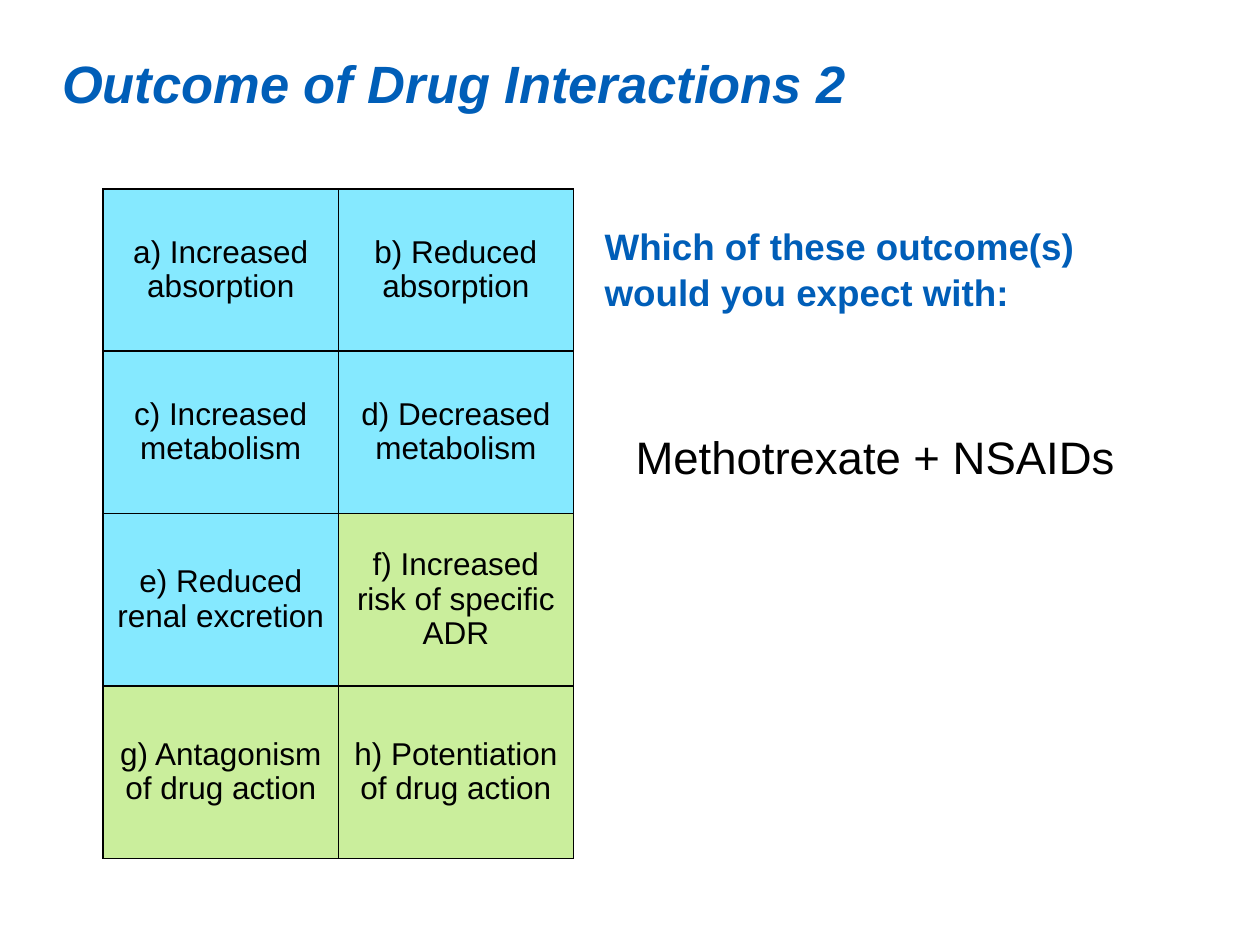
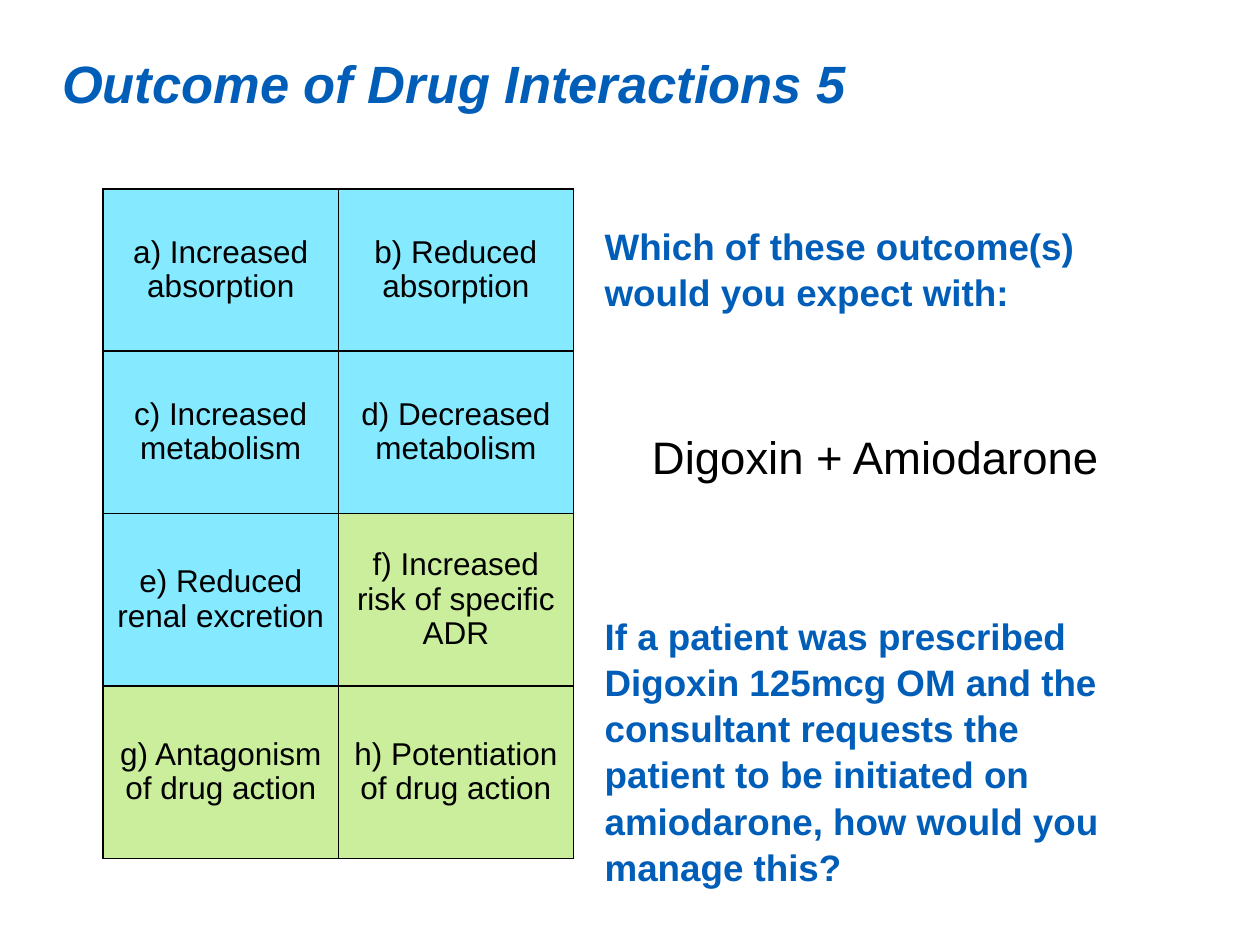
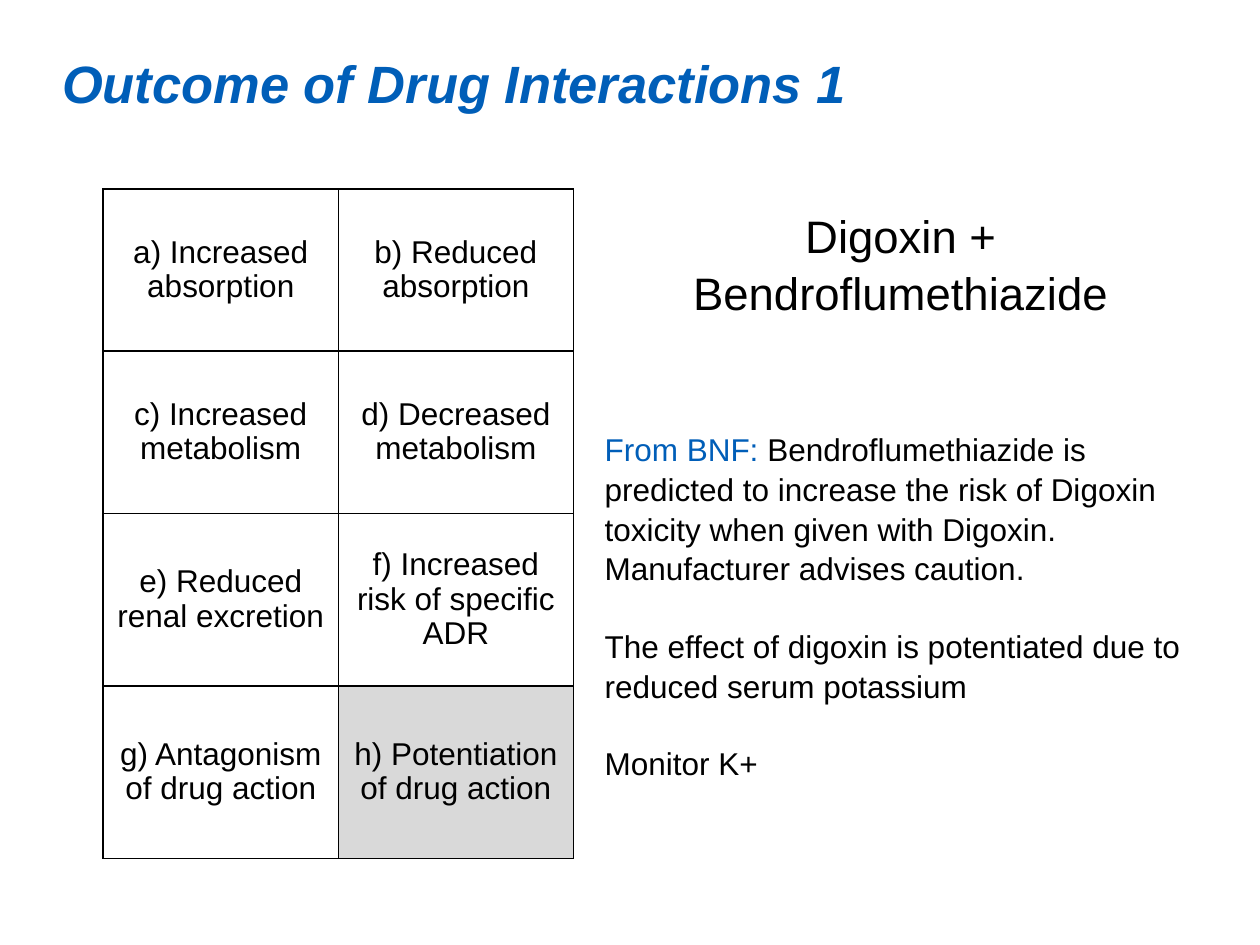
from dataclasses import dataclass
from typing import Optional

from lxml.etree import SubElement
from pptx import Presentation
from pptx.dml.color import RGBColor
from pptx.enum.text import MSO_ANCHOR, PP_ALIGN
from pptx.oxml.ns import qn
from pptx.slide import Slide
from pptx.table import _Cell
from pptx.text.text import Font, TextFrame
from pptx.util import Cm, Pt


@dataclass(frozen=True)
class Theme:
    font: str = "Arial"
    blue: str = "005EB8"
    black: str = "000000"
    white: str = "FFFFFF"
    cyan: str = "85E9FF"
    green: str = "CAEE9C"
    grey: str = "D9D9D9"
    title_size: int = 30
    drug_size: int = 26
    question_size: int = 21
    body_size: int = 18
    text_spacing: float = 1.05
    cell_spacing: float = 0.97


@dataclass(frozen=True)
class TextStyle:
    size: int
    color: str
    bold: bool = False
    italic: bool = False
    alignment: PP_ALIGN = PP_ALIGN.LEFT


@dataclass(frozen=True)
class Run:
    text: str
    color: str


@dataclass(frozen=True)
class TextBlock:
    paragraphs: tuple[tuple[Run, ...], ...]
    style: TextStyle
    left: float
    top: float
    width: float
    height: float
    gap: float = 0


@dataclass(frozen=True)
class OutcomeSlide:
    number: int
    fills: tuple[str, ...]
    blocks: tuple[TextBlock, ...]


THEME = Theme()
TITLE = TextStyle(THEME.title_size, THEME.blue, bold=True, italic=True)
QUESTION = TextStyle(THEME.question_size, THEME.blue, bold=True)
DRUGS = TextStyle(THEME.drug_size, THEME.black, alignment=PP_ALIGN.CENTER)
BODY = TextStyle(THEME.body_size, THEME.black)
OUTCOME = TextStyle(THEME.body_size, THEME.black, alignment=PP_ALIGN.CENTER)

TEXT_LEFT = 12.19
COLUMN_COUNT = 2
COLUMN_WIDTH = 4.74
ROW_HEIGHTS = (3.27, 3.27, 3.48, 3.48)
OUTCOMES = (
    "a) Increased absorption",
    "b) Reduced absorption",
    "c) Increased metabolism",
    "d) Decreased metabolism",
    "e) Reduced renal excretion",
    "f) Increased risk of specific ADR",
    "g) Antagonism of drug action",
    "h) Potentiation of drug action",
)
QUESTION_FILLS = (THEME.cyan,) * 5 + (THEME.green,) * 3
ANSWER_FILLS = (THEME.white,) * 7 + (THEME.grey,)


def question(text: str, top: float, height: float) -> TextBlock:
    return TextBlock(((Run(text, THEME.blue),),), QUESTION, TEXT_LEFT, top, 10.16, height)


def drugs(text: str, left: float = TEXT_LEFT, top: float = 8.59, height: float = 1.12) -> TextBlock:
    return TextBlock(((Run(text, THEME.black),),), DRUGS, left, top, 10.92, height)


EXPECTED = question("Which of these outcome(s) would you expect with:", 4.47, 1.8)
SLIDES = (
    OutcomeSlide(2, QUESTION_FILLS, (EXPECTED, drugs("Methotrexate + NSAIDs"))),
    OutcomeSlide(
        5,
        QUESTION_FILLS,
        (
            EXPECTED,
            drugs("Digoxin + Amiodarone"),
            question(
                "If a patient was prescribed Digoxin 125mcg OM and the consultant requests "
                "the patient to be initiated on amiodarone, how would you manage this?",
                12.32,
                6.27,
            ),
        ),
    ),
    OutcomeSlide(
        1,
        ANSWER_FILLS,
        (
            drugs("Digoxin + Bendroflumethiazide", 12.7, 4.14, 2.24),
            TextBlock(
                (
                    (
                        Run("From BNF: ", THEME.blue),
                        Run(
                            "Bendroflumethiazide is predicted to increase the risk of Digoxin "
                            "toxicity when given with Digoxin. Manufacturer advises caution.",
                            THEME.black,
                        ),
                    ),
                    (Run("The effect of digoxin is potentiated due to reduced serum potassium", THEME.black),),
                    (Run("Monitor K+", THEME.black),),
                ),
                BODY,
                TEXT_LEFT,
                8.64,
                11.99,
                6.93,
                gap=21.6,
            ),
        ),
    ),
)


def format_font(font: Font, style: TextStyle) -> None:
    font.name = THEME.font
    font.size = Pt(style.size)
    font.bold = style.bold
    font.italic = style.italic
    font.color.rgb = RGBColor.from_string(style.color)


def prepare_frame(frame: TextFrame) -> None:
    frame.word_wrap = True
    frame.vertical_anchor = MSO_ANCHOR.TOP
    frame.margin_left = frame.margin_right = frame.margin_top = frame.margin_bottom = 0


def add_title(slide: Slide, text: str) -> None:
    title = slide.shapes.title
    title.left, title.top, title.width, title.height = Cm(1.25), Cm(1.02), Cm(21.87), Cm(1.27)
    prepare_frame(title.text_frame)
    title.text_frame.text = text
    paragraph = title.text_frame.paragraphs[0]
    paragraph.alignment = TITLE.alignment
    format_font(paragraph.font, TITLE)


def add_text(slide: Slide, block: TextBlock) -> None:
    box = slide.shapes.add_textbox(Cm(block.left), Cm(block.top), Cm(block.width), Cm(block.height))
    frame = box.text_frame
    prepare_frame(frame)
    for index, runs in enumerate(block.paragraphs):
        paragraph = frame.add_paragraph() if index else frame.paragraphs[0]
        paragraph.alignment = block.style.alignment
        paragraph.line_spacing = THEME.text_spacing
        paragraph.space_before = Pt(block.gap if index else 0)
        format_font(paragraph.font, block.style)
        for part in runs:
            run = paragraph.add_run()
            run.text = part.text
            if part.color != block.style.color:
                run.font.color.rgb = RGBColor.from_string(part.color)


def add_borders(cell: _Cell) -> None:
    properties = cell._tc.get_or_add_tcPr()
    for position, side in enumerate(("a:lnL", "a:lnR", "a:lnT", "a:lnB")):
        line = properties.makeelement(qn(side), {"w": str(Pt(1))})
        properties.insert(position, line)
        fill = SubElement(line, qn("a:solidFill"))
        SubElement(fill, qn("a:srgbClr"), {"val": THEME.black})


def format_cell(cell: _Cell, text: str, fill: str) -> None:
    cell.text = text
    cell.vertical_anchor = MSO_ANCHOR.MIDDLE
    cell.margin_left = cell.margin_right = Cm(0.15)
    cell.margin_top = cell.margin_bottom = 0
    cell.fill.solid()
    cell.fill.fore_color.rgb = RGBColor.from_string(fill)
    paragraph = cell.text_frame.paragraphs[0]
    paragraph.alignment = OUTCOME.alignment
    paragraph.line_spacing = THEME.cell_spacing
    format_font(paragraph.font, OUTCOME)
    add_borders(cell)


def add_outcomes(slide: Slide, fills: tuple[str, ...]) -> None:
    table = slide.shapes.add_table(
        len(ROW_HEIGHTS),
        COLUMN_COUNT,
        Cm(2.08),
        Cm(3.81),
        Cm(COLUMN_WIDTH * COLUMN_COUNT),
        Cm(sum(ROW_HEIGHTS)),
    ).table
    table.first_row = table.horz_banding = False
    for column in table.columns:
        column.width = Cm(COLUMN_WIDTH)
    for row, height in zip(table.rows, ROW_HEIGHTS):
        row.height = Cm(height)
    for cell, text, fill in zip(table.iter_cells(), OUTCOMES, fills):
        format_cell(cell, text, fill)


def add_slide(presentation: Presentation, content: OutcomeSlide) -> None:
    title_only: Optional[int] = 5
    slide = presentation.slides.add_slide(presentation.slide_layouts[title_only])
    add_title(slide, f"Outcome of Drug Interactions {content.number}")
    add_outcomes(slide, content.fills)
    for block in content.blocks:
        add_text(slide, block)


def main() -> None:
    presentation = Presentation()
    presentation.slide_width = Cm(25.4)
    presentation.slide_height = Cm(19.05)
    for content in SLIDES:
        add_slide(presentation, content)
    presentation.save("out.pptx")


if __name__ == "__main__":
    main()
